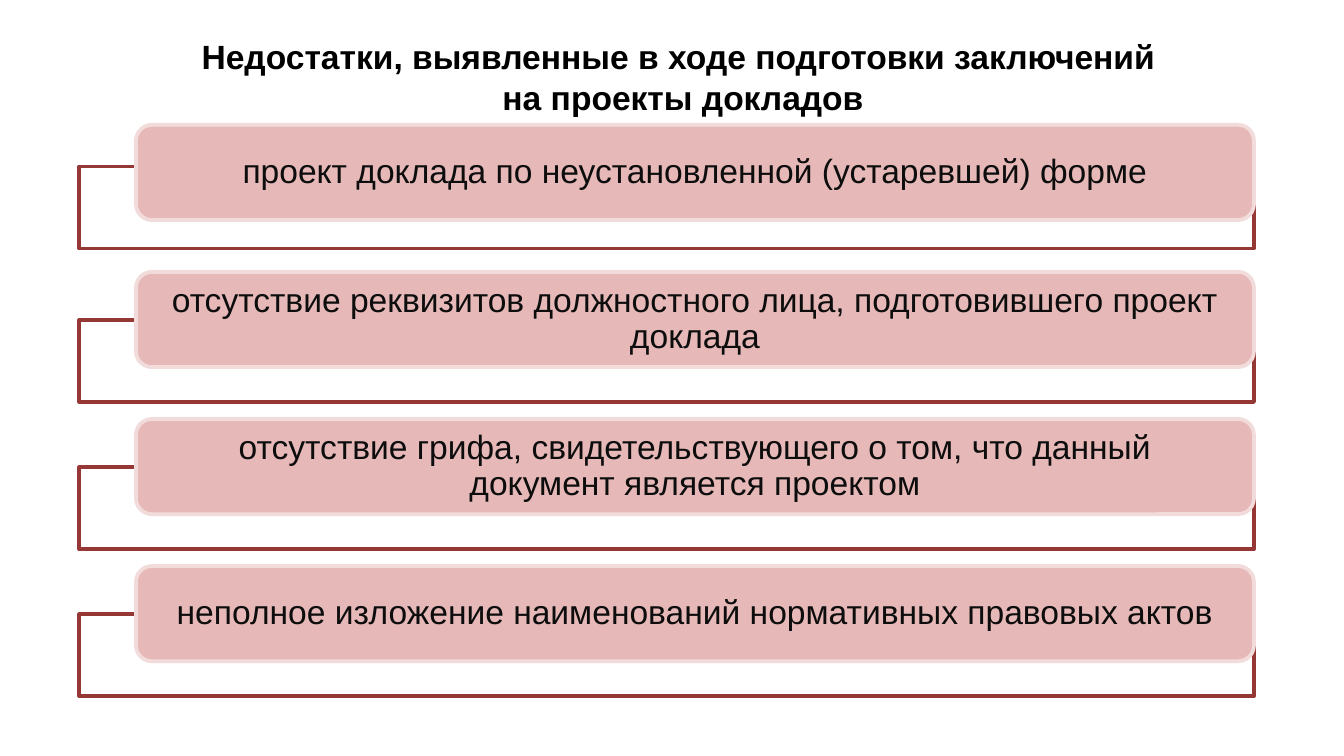
from pptx import Presentation
from pptx.dml.color import RGBColor
from pptx.enum.shapes import MSO_SHAPE
from pptx.enum.text import MSO_ANCHOR, MSO_AUTO_SIZE, PP_ALIGN
from pptx.oxml.ns import qn
from pptx.util import Cm, Pt
from lxml.etree import SubElement

BLACK = RGBColor(0x00, 0x00, 0x00)
DARK_GREY = RGBColor(0x0D, 0x0D, 0x0D)
WHITE = RGBColor(0xFF, 0xFF, 0xFF)
DARK_RED = RGBColor(0x95, 0x37, 0x35)
PINK = RGBColor(0xE6, 0xB9, 0xB8)
PALE_PINK = RGBColor(0xF2, 0xDC, 0xDB)

TITLE_LINES = [
    "Недостатки, выявленные в ходе подготовки заключений ",
    "на проекты докладов",
]
SHORTCOMINGS = [
    "проект доклада по неустановленной (устаревшей) форме",
    "отсутствие реквизитов должностного лица, подготовившего проект доклада",
    "отсутствие грифа, свидетельствующего о том, что данный документ является проектом",
    "неполное изложение наименований нормативных правовых актов",
]

TITLE_FONT = {"name": "Arial", "size": Pt(18), "bold": True}
CARD_FONT = {"name": "Arial", "size": Pt(18), "bold": False}
CARD_FRAME = {
    "word_wrap": True,
    "vertical_anchor": MSO_ANCHOR.MIDDLE,
    "margin_left": Cm(0.58),
    "margin_right": Cm(0.58),
    "margin_top": 0,
    "margin_bottom": 0,
}
TITLE_FRAME = {
    "word_wrap": True,
    "auto_size": MSO_AUTO_SIZE.NONE,
    "vertical_anchor": MSO_ANCHOR.TOP,
}

ROW_STEP = 2.78
CARD_HEIGHT = 1.8
CARD_INDENT = 1.07
FRAME_HEIGHT = 1.55
FIRST_FRAME_DROP = 0.79
FRAME_DROP = 0.91


def apply_format(target, values):
    for name, value in values.items():
        setattr(target, name, value)


def format_paragraph(paragraph, font_values, color):
    paragraph.alignment = PP_ALIGN.CENTER
    apply_format(paragraph.font, font_values)
    paragraph.font.color.rgb = color


def add_box(slide, kind, box, fill_color, line_color):
    """Add a filled, outlined shape; box is left, top, width, height in cm."""
    shape = slide.shapes.add_shape(kind, *map(Cm, box))
    shape.shadow.inherit = False
    shape.fill.solid()
    shape.fill.fore_color.rgb = fill_color
    shape.line.color.rgb = line_color
    shape.line.width = Pt(2)
    return shape


def set_opacity(shape, percent):
    color = shape.fill._xPr.find(qn("a:solidFill"))[0]
    SubElement(color, qn("a:alpha")).set("val", str(percent * 1000))


def place_title(slide, box):
    title = slide.shapes.title
    title.left, title.top, title.width, title.height = map(Cm, box)
    apply_format(title.text_frame, TITLE_FRAME)
    title.text_frame.text = "\n".join(TITLE_LINES)
    for paragraph in title.text_frame.paragraphs:
        format_paragraph(paragraph, TITLE_FONT, BLACK)


def add_shortcoming(slide, box, frame_drop, text):
    """Add a card that overlaps the outlined frame behind it."""
    left, top, width = box
    frame = add_box(slide, MSO_SHAPE.RECTANGLE,
                    (left, top + frame_drop, width, FRAME_HEIGHT), WHITE, DARK_RED)
    set_opacity(frame, 90)

    card = add_box(slide, MSO_SHAPE.ROUNDED_RECTANGLE,
                   (left + CARD_INDENT, top, width - CARD_INDENT, CARD_HEIGHT),
                   PINK, PALE_PINK)
    apply_format(card.text_frame, CARD_FRAME)
    card.text_frame.text = text
    paragraph = card.text_frame.paragraphs[0]
    paragraph.line_spacing = 0.9
    format_paragraph(paragraph, CARD_FONT, DARK_GREY)


def add_shortcoming_list(slide, left, top, width):
    for index, text in enumerate(SHORTCOMINGS):
        frame_drop = FRAME_DROP if index else FIRST_FRAME_DROP
        add_shortcoming(slide, (left, top + index * ROW_STEP, width), frame_drop, text)


def main():
    presentation = Presentation()
    presentation.slide_width = Cm(25.4)
    presentation.slide_height = Cm(14.29)
    slide = presentation.slides.add_slide(presentation.slide_layouts[5])
    place_title(slide, (0.91, 0.56, 24, 1.8))
    add_shortcoming_list(slide, 1.5, 2.36, 22.2)
    presentation.save("out.pptx")


if __name__ == "__main__":
    main()
